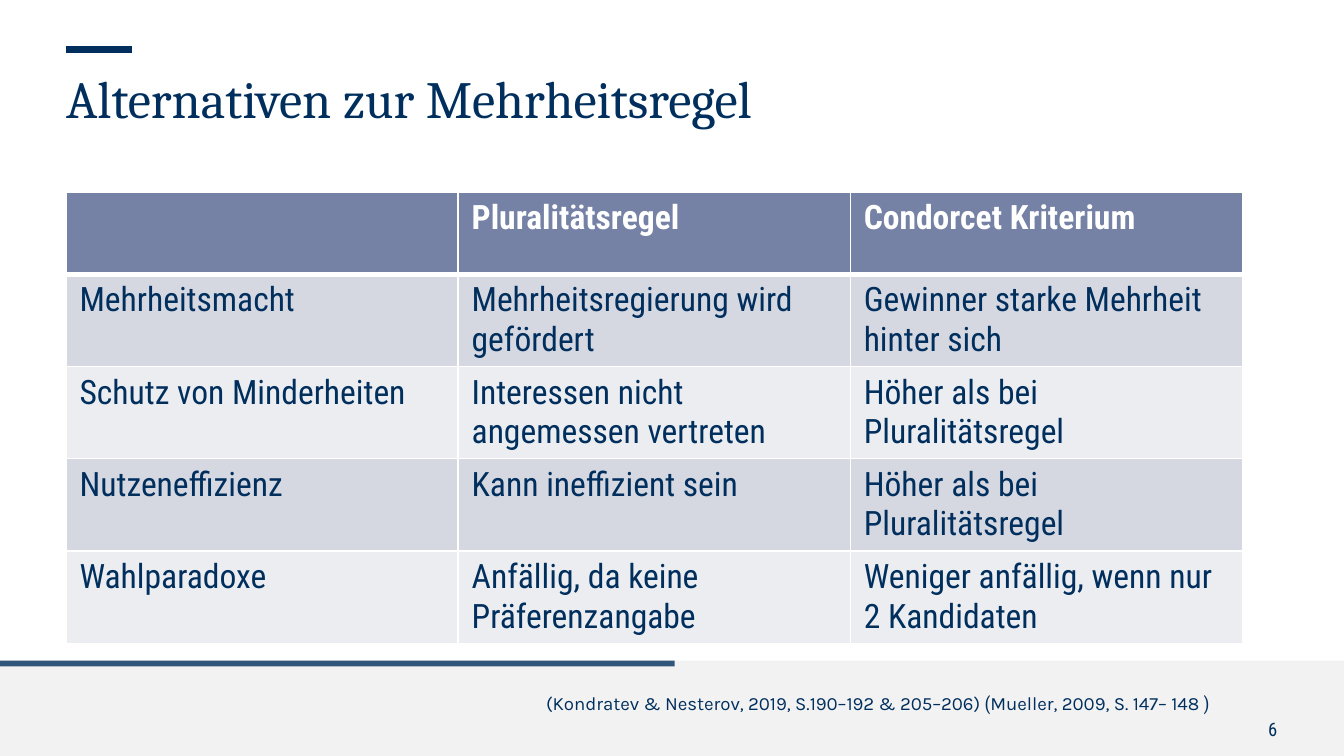
"""Build a slide comparing two alternatives to majority rule."""
from lxml import etree
from pptx import Presentation
from pptx.dml.color import RGBColor
from pptx.enum.shapes import MSO_CONNECTOR, MSO_SHAPE
from pptx.enum.text import MSO_ANCHOR, MSO_AUTO_SIZE, PP_ALIGN
from pptx.oxml.ns import qn
from pptx.util import Cm, Pt

NAVY = RGBColor(0x00, 0x2F, 0x5D)
WHITE = RGBColor(0xFF, 0xFF, 0xFF)
FOOTER_GRAY = RGBColor(0xF2, 0xF2, 0xF2)
HEADER_BLUE = RGBColor(0x76, 0x82, 0xA5)
BANDS = (RGBColor(0xD6, 0xD8, 0xE1), RGBColor(0xEC, 0xED, 0xF0))

LEFT, RIGHT = PP_ALIGN.LEFT, PP_ALIGN.RIGHT
TOP = MSO_ANCHOR.TOP
NO_AUTOFIT = MSO_AUTO_SIZE.NONE
RECTANGLE = MSO_SHAPE.RECTANGLE
STRAIGHT = MSO_CONNECTOR.STRAIGHT

TITLE_FONT, BODY_FONT, CITATION_FONT = "Cambria", "Roboto Condensed", "Karla"

RULES = [
    ["", "Pluralitätsregel", "Condorcet Kriterium"],
    ["Mehrheitsmacht", "Mehrheitsregierung wird gefördert",
     "Gewinner starke Mehrheit hinter sich"],
    ["Schutz von Minderheiten", "Interessen nicht angemessen vertreten",
     "Höher als bei Pluralitätsregel"],
    ["Nutzeneffizienz", "Kann ineffizient sein", "Höher als bei Pluralitätsregel"],
    ["Wahlparadoxe", "Anfällig, da keine Präferenzangabe",
     "Weniger anfällig, wenn nur 2 Kandidaten"],
]
CITATION = [
    ("(Kondratev & Nesterov, 2019, S.190–192 & 205–206) ", CITATION_FONT),
    ("(", BODY_FONT),
    ("Mueller, 2009, S. 147– 148 ", CITATION_FONT),
    (")", BODY_FONT),
]


def add_text(paragraph, text, *, size, font=BODY_FONT, color=NAVY, bold=False, align=LEFT):
    paragraph.alignment = align
    run = paragraph.add_run()
    run.text = text
    run.font.name = font
    run.font.size = Pt(size)
    run.font.bold = bold
    run.font.color.rgb = color


def set_borders(cell, color, bottom_width):
    properties = cell._tc.get_or_add_tcPr()
    widths = {"a:lnL": 1, "a:lnR": 1, "a:lnT": 1, "a:lnB": bottom_width}
    for index, (tag, width) in enumerate(widths.items()):
        line = etree.Element(qn(tag), w=str(Pt(width)))
        fill = etree.SubElement(line, qn("a:solidFill"))
        etree.SubElement(fill, qn("a:srgbClr"), val=str(color))
        properties.insert(index, line)


class SlideBuilder:
    def __init__(self, slide):
        self.slide = slide
        self.shapes = slide.shapes

    def frame(self, shape):
        frame = shape.text_frame
        frame.word_wrap = True
        frame.auto_size = NO_AUTOFIT
        frame.vertical_anchor = TOP
        frame.margin_left = frame.margin_right = 0
        frame.margin_top = frame.margin_bottom = 0
        return frame

    def title(self, text, left, top, width, height):
        shape = self.shapes.title
        shape.left, shape.top = Cm(left), Cm(top)
        shape.width, shape.height = Cm(width), Cm(height)
        paragraph = self.frame(shape).paragraphs[0]
        add_text(paragraph, text, size=28, font=TITLE_FONT)

    def text_box(self, runs, left, top, width, height):
        shape = self.shapes.add_textbox(Cm(left), Cm(top), Cm(width), Cm(height))
        paragraph = self.frame(shape).paragraphs[0]
        for text, font in runs:
            add_text(paragraph, text, size=10, font=font, align=RIGHT)

    def bar(self, left, top, width, height, color, opacity=100):
        shape = self.shapes.add_shape(RECTANGLE, Cm(left), Cm(top), Cm(width), Cm(height))
        shape.shadow.inherit = False
        shape.fill.solid()
        shape.fill.fore_color.rgb = color
        shape.line.fill.background()
        if opacity < 100:
            fill_color = shape._element.spPr.find(qn("a:solidFill"))[0]
            etree.SubElement(fill_color, qn("a:alpha"), val=str(opacity * 1000))

    def rule(self, left, top, right, color, width):
        connector = self.shapes.add_connector(STRAIGHT, Cm(left), Cm(top), Cm(right), Cm(top))
        connector.line.color.rgb = color
        connector.line.width = Pt(width)
        etree.SubElement(connector._element.spPr, qn("a:effectLst"))

    def table(self, rows, left, top, column_width, row_height):
        row_count, column_count = len(rows), len(rows[0])
        table = self.shapes.add_table(
            row_count, column_count, Cm(left), Cm(top),
            Cm(column_width * column_count), Cm(row_height * row_count)).table
        for column in table.columns:
            column.width = Cm(column_width)
        for row_index, texts in enumerate(rows):
            is_header = row_index == 0
            fill = HEADER_BLUE if is_header else BANDS[(row_index - 1) % 2]
            table.rows[row_index].height = Cm(row_height)
            for column_index, text in enumerate(texts):
                cell = table.cell(row_index, column_index)
                cell.fill.solid()
                cell.fill.fore_color.rgb = fill
                set_borders(cell, WHITE, 3 if is_header else 1)
                if text:
                    add_text(cell.text_frame.paragraphs[0], text, size=18,
                             color=WHITE if is_header else NAVY, bold=is_header)


def main():
    presentation = Presentation()
    presentation.slide_width, presentation.slide_height = Cm(25.4), Cm(14.29)
    builder = SlideBuilder(presentation.slides.add_slide(presentation.slide_layouts[5]))
    builder.bar(0, 12.49, 25.4, 1.8, FOOTER_GRAY)
    builder.text_box([("6", BODY_FONT)], 22.87, 13.57, 1.27, 0.43)
    builder.bar(0, 12.49, 12.75, 0.11, NAVY, opacity=80)
    builder.rule(1.25, 0.94, 2.5, NAVY, 3.5)
    builder.text_box(CITATION, 8.33, 13.08, 14.53, 0.46)
    builder.title("Alternativen zur Mehrheitsregel", 1.25, 1.25, 23.37, 2.29)
    builder.table(RULES, 1.25, 3.63, 7.41, 1.55)
    presentation.save("out.pptx")


if __name__ == "__main__":
    main()
